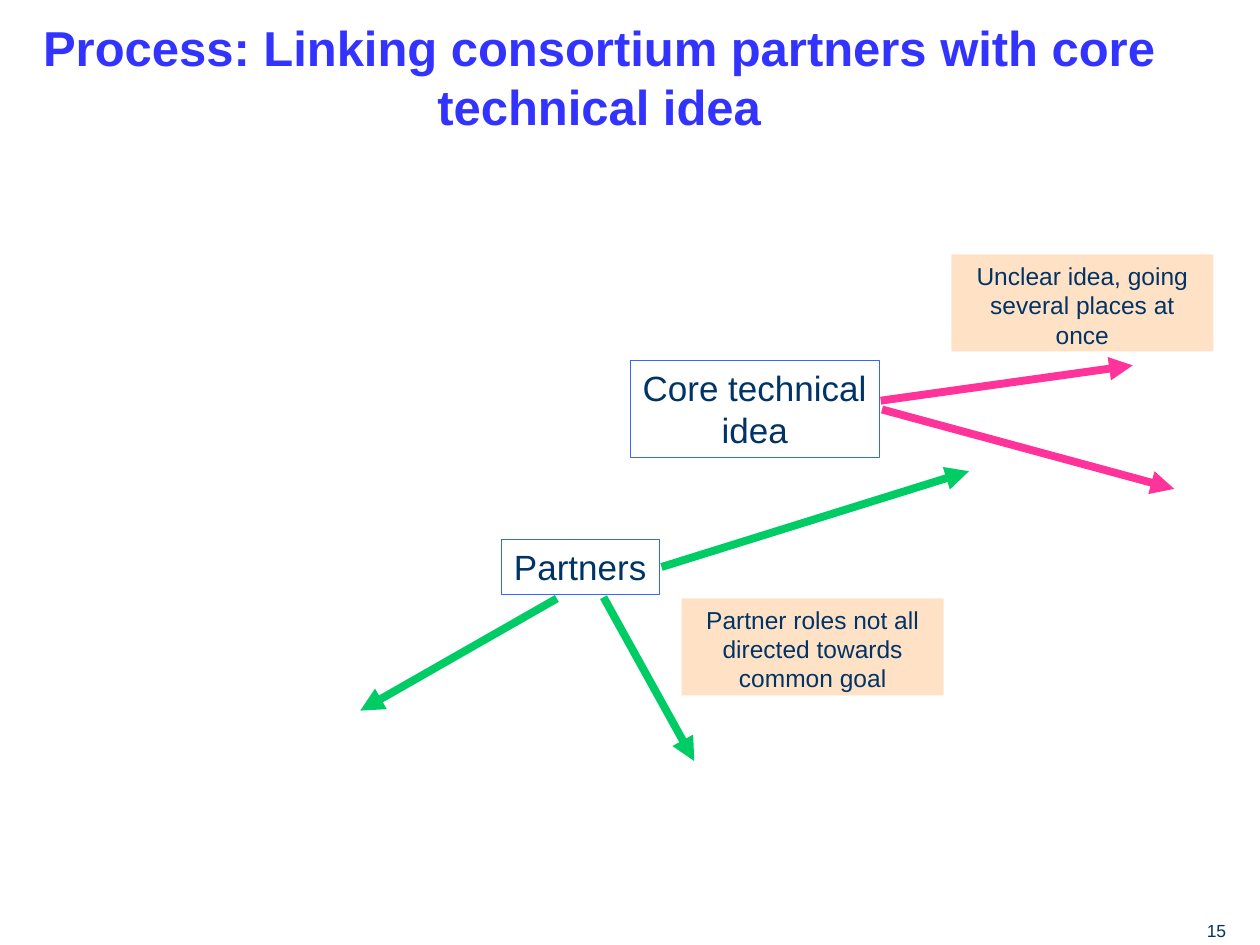
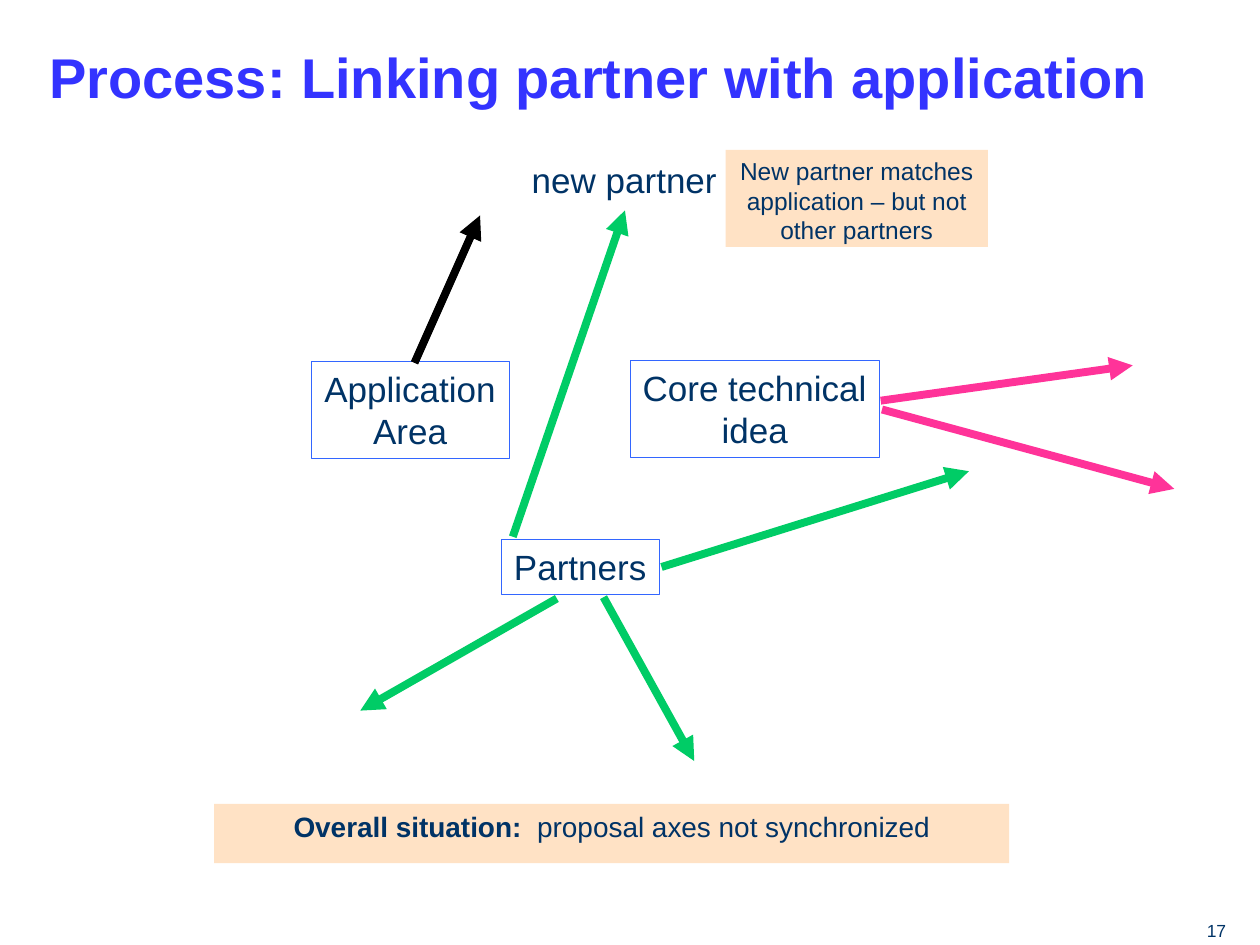
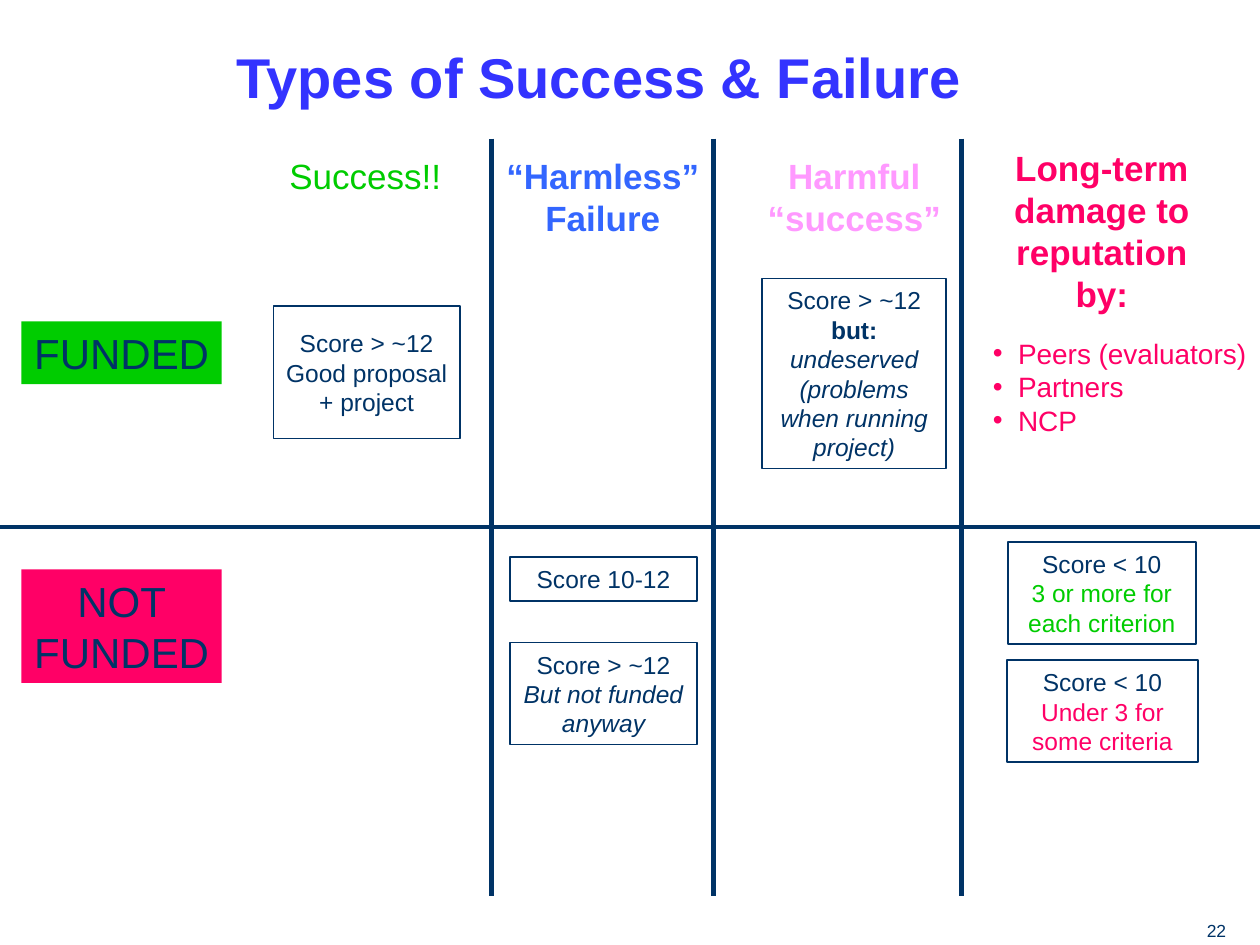
"""Build three slides on consortium proposals: axis diagrams and a result grid."""
from lxml import etree
from pptx import Presentation
from pptx.dml.color import RGBColor
from pptx.enum.shapes import MSO_CONNECTOR, MSO_SHAPE
from pptx.enum.text import MSO_ANCHOR, MSO_AUTO_SIZE, PP_ALIGN
from pptx.oxml.ns import qn
from pptx.util import Inches, Pt

RECT = MSO_SHAPE.RECTANGLE
STRAIGHT = MSO_CONNECTOR.STRAIGHT
TOP, MIDDLE = MSO_ANCHOR.TOP, MSO_ANCHOR.MIDDLE
LEFT, CENTER, RIGHT = PP_ALIGN.LEFT, PP_ALIGN.CENTER, PP_ALIGN.RIGHT
NO_FIT = MSO_AUTO_SIZE.NONE

FONT = "Arial"
NAVY, TITLE_BLUE, BLUE = "003366", "3333FF", "3366FF"
PINK, TEAL, BLACK, WHITE = "FF3399", "00CC66", "000000", "FFFFFF"
PEACH, GREEN, RED, LILAC = "FFE2C5", "00CC00", "FF0066", "FF99FF"
TITLE_LAYOUT, BODY_LAYOUT = 5, 1
TITLE_AT = (0.14, 0.25, 9.23, 0.71)
NUMBER_AT = (8.75, 7.25, 1.08, 0.25)
NOTE_SIZE = (2.08, 0.77)


def rgb(value):
    """Turn a hex string into a colour."""
    return RGBColor.from_string(value)


def format_run(r, color=NAVY, **values):
    """Apply font values to a run."""
    for name, value in {"name": FONT, "bold": False, **values}.items():
        setattr(r.font, name, value)
    r.font.color.rgb = rgb(color)


def write(p, parts, align=CENTER, size=14, **base):
    """Fill a paragraph with strings or (string, format) pairs."""
    p.alignment = align
    for part in [parts] if isinstance(parts, str) else parts:
        text, extra = (part, {}) if isinstance(part, str) else part
        for i, line in enumerate(text.split("\n")):
            if i:
                p.add_line_break()
            if line:
                r = p.add_run()
                r.text = line
                format_run(r, **{"size": Pt(size), **base, **extra})


def set_frame(tf, wrap=True, anchor=TOP):
    """Set wrapping and anchoring of a text frame."""
    values = {"auto_size": NO_FIT, "word_wrap": wrap, "vertical_anchor": anchor}
    for name, value in values.items():
        setattr(tf, name, value)


def place(sp, at):
    """Move and size a shape."""
    for name, value in zip(("left", "top", "width", "height"), at):
        setattr(sp, name, Inches(value))


def add_text(s, at, parts, wrap=False, **style):
    """Add a plain text box."""
    sp = s.shapes.add_textbox(*map(Inches, at))
    set_frame(sp.text_frame, wrap)
    write(sp.text_frame.paragraphs[0], parts, **style)


def add_box(s, at, parts, fill=None, line=None, wrap=True, anchor=TOP, **style):
    """Add a rectangle with text; line is a (colour, width) pair."""
    sp = s.shapes.add_shape(RECT, *map(Inches, at))
    sp.shadow.inherit = False
    if fill:
        sp.fill.solid()
        sp.fill.fore_color.rgb = rgb(fill)
    else:
        sp.fill.background()
    if line:
        sp.line.color.rgb = rgb(line[0])
        sp.line.width = Pt(line[1])
    else:
        sp.line.fill.background()
    set_frame(sp.text_frame, wrap, anchor)
    write(sp.text_frame.paragraphs[0], parts, **style)


def add_axis(s, at, text):
    """Add a thin-framed box that names a proposal axis."""
    add_box(s, at, text, line=(BLUE, 0.25), wrap=False, size=20)


def add_note(s, left, top, text):
    """Add a peach comment box."""
    add_box(s, (left, top, *NOTE_SIZE), text, fill=PEACH)


def add_score(s, at, parts):
    """Add a framed score box."""
    add_box(s, at, parts, fill=WHITE, line=(NAVY, 1), anchor=MIDDLE)


def add_line(s, start, end, color=NAVY, width=4.5, arrow=False):
    """Add a straight line, with an arrowhead at its end if asked."""
    sp = s.shapes.add_connector(STRAIGHT, *map(Inches, (*start, *end)))
    sp.line.color.rgb = rgb(color)
    sp.line.width = Pt(width)
    if arrow:
        etree.SubElement(sp.line._get_or_add_ln(), qn("a:tailEnd"), type="triangle")
    etree.SubElement(sp._element.spPr, qn("a:effectLst"))


def add_arrows(s, color, *ends):
    """Add arrows of one colour from (start, end) pairs."""
    for start, end in ends:
        add_line(s, start, end, color, arrow=True)


def add_bullets(s, at, items, **style):
    """Fill the body placeholder with a bullet list."""
    sp = s.placeholders[1]
    place(sp, at)
    tf = sp.text_frame
    set_frame(tf)
    tf.margin_right = 0
    for i, item in enumerate(items):
        p = tf.add_paragraph() if i else tf.paragraphs[0]
        pPr = p._p.get_or_add_pPr()
        pPr.set("marL", str(Inches(0.2)))
        pPr.set("indent", str(-Inches(0.2)))
        etree.SubElement(pPr, qn("a:buChar"), char="•")
        p.space_before = Pt(0)
        write(p, item, LEFT, **style)


def add_slide(prs, title, number, size=32, layout=TITLE_LAYOUT):
    """Add a slide with its title and number."""
    s = prs.slides.add_slide(prs.slide_layouts[layout])
    place(s.shapes.title, TITLE_AT)
    tf = s.shapes.title.text_frame
    set_frame(tf, anchor=MIDDLE)
    write(tf.paragraphs[0], title, size=size, color=TITLE_BLUE, bold=True)
    add_text(s, NUMBER_AT, str(number), wrap=True, align=RIGHT, size=10)
    return s


def add_core_diagram(s):
    """Draw the core idea and the partners with their diverging arrows."""
    add_axis(s, (5, 2.86, 1.98, 0.77), "Core technical\nidea")
    add_axis(s, (3.98, 4.28, 1.25, 0.44), "Partners")
    add_arrows(s, PINK, ((7, 3.25), (9.32, 3.88)), ((6.99, 3.18), (8.99, 2.9)))
    add_arrows(s, TEAL, ((5.25, 4.5), (7.69, 3.74)), ((4.79, 4.74), (5.51, 6.04)),
               ((4.42, 4.75), (2.86, 5.64)))


def build_core_slide(prs):
    """Build the slide on partners and the core idea."""
    s = add_slide(prs, "Process: Linking consortium partners with core technical idea",
                  15, size=28)
    add_core_diagram(s)
    add_note(s, 7.55, 2.02, "Unclear idea, going several places at once")
    add_note(s, 5.41, 4.75, "Partner roles not all directed towards common goal")


def build_application_slide(prs):
    """Build the slide on partners and the application."""
    s = add_slide(prs, "Process: Linking partner with application", 17)
    add_core_diagram(s)
    add_axis(s, (2.47, 2.87, 1.57, 0.77), "Application\nArea")
    add_arrows(s, BLACK, ((3.29, 2.88), (3.81, 1.71)))
    add_arrows(s, TEAL, ((4.07, 4.26), (4.96, 1.67)))
    add_text(s, (4.12, 1.21, 1.67, 0.43), "new partner", size=20)
    add_note(s, 5.76, 1.19, "New partner matches application – but not other partners")
    add_box(s, (1.7, 6.38, 6.31, 0.47),
            [("Overall situation:", {"bold": True}), "  proposal axes not synchronized"],
            fill=PEACH, size=16)


def build_result_slide(prs):
    """Build the grid of success and failure types."""
    s = add_slide(prs, "Types of Success & Failure", 22, layout=BODY_LAYOUT)
    italic = {"italic": True}
    scores = [
        ((6.05, 2.21, 1.46, 1.51),
         ["Score > ~12\n", ("but: ", {"bold": True}),
          ("undeserved\n(problems when running project)", italic)]),
        ((2.17, 2.43, 1.48, 1.05), "Score > ~12\nGood proposal + project"),
        ((4.05, 4.42, 1.48, 0.35), "Score 10-12"),
        ((4.05, 5.1, 1.48, 0.81), ["Score > ~12\n", ("But not funded anyway", italic)]),
        ((8, 4.3, 1.49, 0.81),
         ["Score < 10\n", ("3 or more for each criterion", {"color": GREEN})]),
        ((7.99, 5.24, 1.52, 0.81),
         ["Score < 10\n", ("Under 3 for some criteria", {"color": RED})]),
    ]
    for at, parts in scores:
        add_score(s, at, parts)

    add_line(s, (0, 4.18), (10, 4.18), width=2.25)
    for x in (3.9, 5.66, 7.63):
        add_line(s, (x, 1.1), (x, 7.11), width=3)

    for top, height, text, fill in ((2.55, 0.5, "FUNDED", GREEN),
                                    (4.52, 0.9, "NOT\nFUNDED", RED)):
        add_box(s, (0.17, top, 1.59, height), text, fill=fill, wrap=False, size=24)

    headings = [
        ((2.2, 1.18, 1.4, 0.43), "Success!!", GREEN, False),
        ((3.92, 1.18, 1.73, 0.77), "“Harmless”\nFailure", BLUE, True),
        ((5.99, 1.18, 1.58, 0.77), "Harmful\n“success”", LILAC, True),
    ]
    for at, text, color, bold in headings:
        add_text(s, at, text, size=20, color=color, bold=bold)
    add_text(s, (7.77, 1.11, 1.95, 1.43), "Long-term\ndamage to\nreputation by:",
             wrap=True, size=20, color=RED, bold=True)
    add_bullets(s, (7.78, 2.62, 2.22, 0.91),
                ["Peers (evaluators)", "Partners", "NCP"], size=16, color=RED)


def main():
    """Build and save the presentation."""
    prs = Presentation()
    prs.slide_width, prs.slide_height = Inches(10), Inches(7.5)
    build_core_slide(prs)
    build_application_slide(prs)
    build_result_slide(prs)
    prs.save("out.pptx")


if __name__ == "__main__":
    main()
